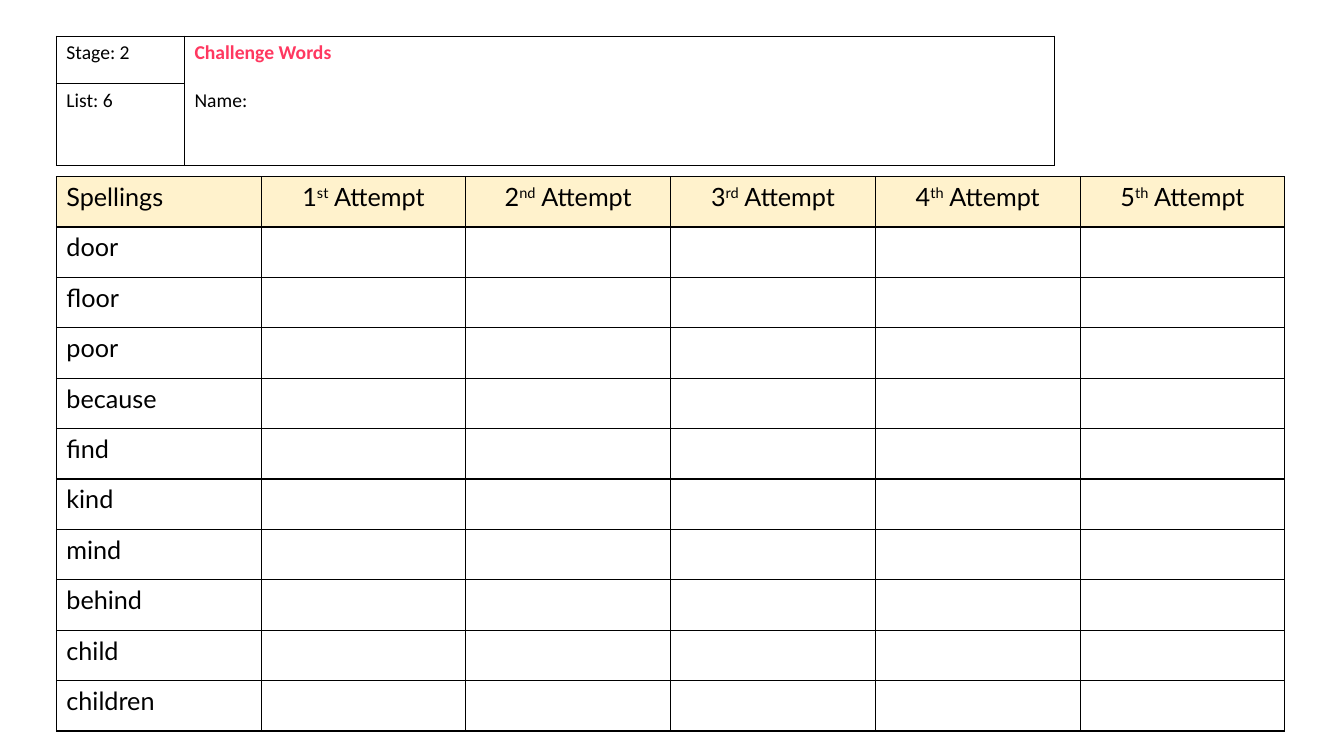
from pptx import Presentation
from pptx.dml.color import RGBColor
from pptx.enum.text import PP_ALIGN
from pptx.oxml import parse_xml
from pptx.oxml.ns import nsdecls
from pptx.util import Cm, Pt

BLACK = RGBColor(0x00, 0x00, 0x00)
CREAM = RGBColor(0xFF, 0xF2, 0xCC)
PINK = RGBColor(0xFF, 0x38, 0x60)


def add_grid(left, top, widths, heights):
    frame = slide.shapes.add_table(len(heights), len(widths), Cm(left), Cm(top),
                                   Cm(sum(widths)), Cm(sum(heights)))
    grid = frame.table
    grid.first_row = grid.horz_banding = False
    for col, width in zip(grid.columns, widths):
        col.width = Cm(width)
    for row, height in zip(grid.rows, heights):
        row.height = Cm(height)
    for cell in grid.iter_cells():
        props = cell._tc.get_or_add_tcPr()
        for side in "LRTB":
            props.append(parse_xml(
                f'<a:ln{side} {nsdecls("a")} w="12700"><a:solidFill>'
                f'<a:srgbClr val="{BLACK}"/></a:solidFill></a:ln{side}>'))
        cell.fill.background()
    return grid


def style(grid, face, size):
    for cell in grid.iter_cells():
        for para in cell.text_frame.paragraphs:
            for run in para.runs:
                run.font.name = face
                run.font.size = Pt(size)
                run.font.color.rgb = BLACK


deck = Presentation()
deck.slide_width, deck.slide_height = Cm(33.87), Cm(19.05)
slide = deck.slides.add_slide(deck.slide_layouts[6])

words = ["door", "floor", "poor", "because", "find",
         "kind", "mind", "behind", "child", "children"]
tries = ["st", "nd", "rd", "th", "th"]

sheet = add_grid(1.42, 4.45, [5.16] * (len(tries) + 1), [1.27] * (len(words) + 1))
for row, word in enumerate(["Spellings"] + words):
    sheet.cell(row, 0).text_frame.text = word
for col, suffix in enumerate(tries, 1):
    para = sheet.cell(0, col).text_frame.paragraphs[0]
    para.alignment = PP_ALIGN.CENTER
    for text in (str(col), suffix, " Attempt"):
        run = para.add_run()
        run.text = text
        if text == suffix:
            run.font._element.set("baseline", "30000")
for cell in sheet.rows[0].cells:
    cell.fill.solid()
    cell.fill.fore_color.rgb = CREAM
style(sheet, "Lato", 18)

head = add_grid(1.42, 0.91, [3.23, 21.92], [1.2, 2.06])
head.cell(0, 1).merge(head.cell(1, 1))
head.cell(0, 0).text_frame.text = "Stage: 2"
head.cell(1, 0).text_frame.text = "List: 6"
body = head.cell(0, 1).text_frame
body.text = "Challenge Words\nName:"
style(head, "Calibri", 14)
title, name = body.paragraphs
title.runs[0].font.bold = True
title.runs[0].font.color.rgb = PINK
name.space_before = Pt(17)

deck.save("out.pptx")
